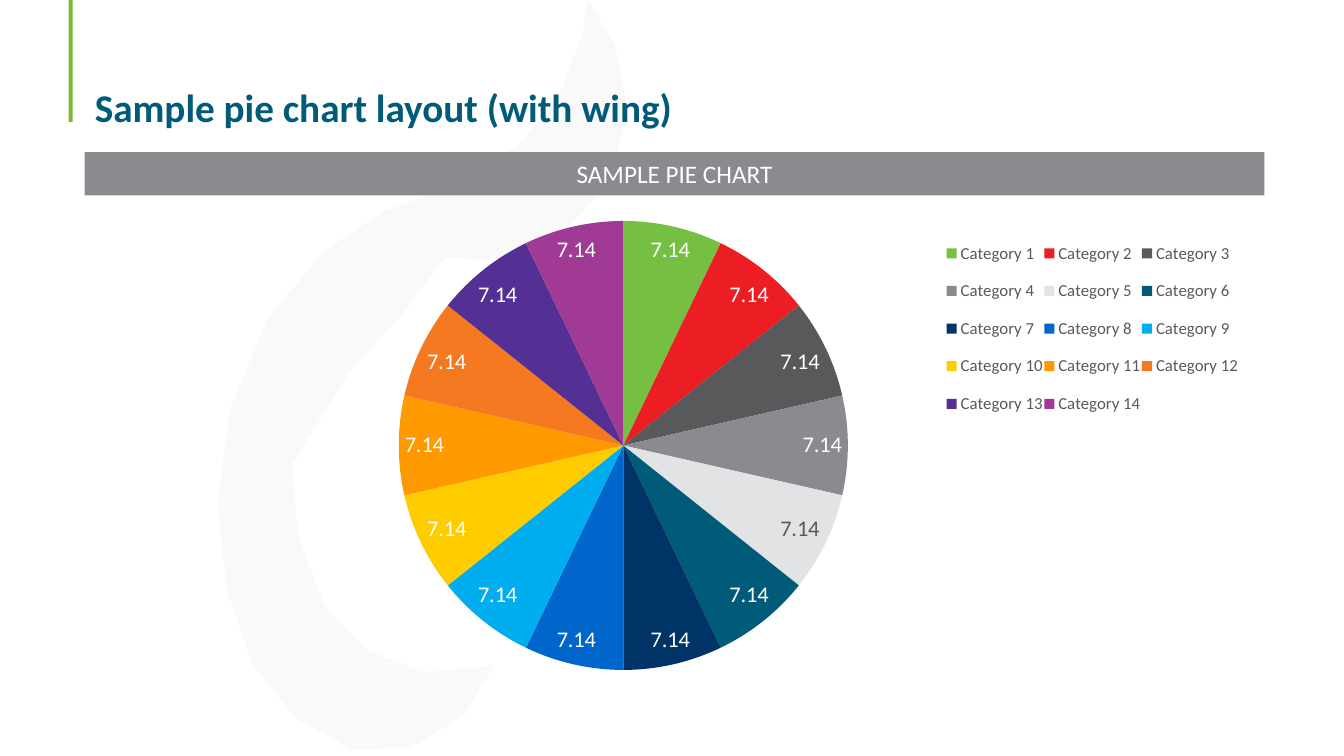
from lxml.etree import SubElement
from pptx import Presentation
from pptx.chart.data import CategoryChartData
from pptx.dml.color import RGBColor
from pptx.enum.chart import XL_CHART_TYPE, XL_LABEL_POSITION, XL_LEGEND_POSITION
from pptx.enum.shapes import MSO_SHAPE
from pptx.enum.text import MSO_ANCHOR, PP_ALIGN
from pptx.oxml.ns import qn
from pptx.util import Inches, Pt

FONT = "Calibri"
COLORS = {
    "accent": "78BB32",
    "wing": "F9F9F9",
    "title": "005B79",
    "banner": "898B8E",
    "text": "58595B",
    "white": "FFFFFF",
}
SLICES = {
    "green": "75C043",
    "red": "ED1D24",
    "charcoal": "58595B",
    "gray": "898B8E",
    "silver": "E2E3E4",
    "teal": "005B79",
    "navy": "003366",
    "blue": "0066CC",
    "sky": "00AEF0",
    "yellow": "FFCC00",
    "amber": "FF9900",
    "orange": "F47920",
    "indigo": "543094",
    "purple": "A03A95",
}
WING = [
    (5.83, 0), (6.1, 0.45), (6.23, 1.1), (6.05, 1.8), (5.57, 2.33),
    (4.9, 2.58), (4.41, 2.56), (4, 3.1), (3.46, 3.7), (2.9, 4.6),
    (2.95, 5.3), (3.22, 6.01), (3.65, 6.45), (4.2, 6.67), (4.9, 6.6),
    (4.6, 7.1), (4.07, 7.42), (3.5, 7.44), (2.94, 7.13), (2.5, 6.58),
    (2.25, 5.85), (2.16, 5), (2.28, 4.07), (2.66, 3.15), (3.22, 2.49),
    (3.8, 2.1), (4.61, 1.8), (5.15, 1.43), (5.55, 0.94), (5.78, 0.33),
]


def rgb(color):
    return RGBColor.from_string(color)


def style_font(font, size, color, bold=False):
    font.name = FONT
    font.size = Pt(size)
    font.bold = bold
    font.color.rgb = rgb(color)


def paint(s, color):
    s.shadow.inherit = False
    s.fill.solid()
    s.fill.fore_color.rgb = rgb(color)
    s.line.fill.background()


def add_bar(slide, x, y, w, h, color):
    s = slide.shapes.add_shape(
        MSO_SHAPE.RECTANGLE, Inches(x), Inches(y), Inches(w), Inches(h))
    paint(s, color)
    return s


def add_wing(slide):
    points = [(Inches(x), Inches(y)) for x, y in WING]
    builder = slide.shapes.build_freeform(*points[0])
    builder.add_line_segments(points[1:], close=True)
    paint(builder.convert_to_shape(), COLORS["wing"])


def set_title(slide, text):
    s = slide.shapes.title
    s.element.getparent().append(s.element)
    s.left, s.top = Inches(0.84), Inches(0.41)
    s.width, s.height = Inches(11.98), Inches(0.94)
    tf = s.text_frame
    tf.text = text
    tf.vertical_anchor = MSO_ANCHOR.BOTTOM
    p = tf.paragraphs[0]
    p.alignment = PP_ALIGN.LEFT
    p.line_spacing = 0.9
    style_font(p.runs[0].font, 28, COLORS["title"], True)


def add_banner(slide, text):
    tf = add_bar(slide, 0.84, 1.51, 11.7, 0.43, COLORS["banner"]).text_frame
    tf.text = text
    tf.vertical_anchor = MSO_ANCHOR.MIDDLE
    p = tf.paragraphs[0]
    p.alignment = PP_ALIGN.CENTER
    style_font(p.runs[0].font, 18, COLORS["white"])


def set_layout(parent, index, box, inner=False):
    for old in parent.findall(qn("c:layout")):
        parent.remove(old)
    layout = SubElement(parent, qn("c:layout"))
    parent.insert(index, layout)
    manual = SubElement(layout, qn("c:manualLayout"))
    if inner:
        SubElement(manual, qn("c:layoutTarget")).set("val", "inner")
    for mode in ("xMode", "yMode"):
        SubElement(manual, qn(f"c:{mode}")).set("val", "edge")
    for side, value in zip("xywh", box):
        SubElement(manual, qn(f"c:{side}")).set("val", str(value))


def add_pie(slide):
    data = CategoryChartData()
    data.categories = [f"Category {i + 1}" for i in range(len(SLICES))]
    data.add_series("Series 1", [7.14] * len(SLICES))
    chart = slide.shapes.add_chart(
        XL_CHART_TYPE.PIE, Inches(0.84), Inches(2.1),
        Inches(11.69), Inches(4.64), data).chart
    chart.has_title = False
    style_font(chart.font, 10, COLORS["text"])

    plot = chart.plots[0]
    plot.vary_by_categories = True
    series = plot.series[0]
    for i, color in enumerate(SLICES.values()):
        fmt = series.points[i].format
        fmt.fill.solid()
        fmt.fill.fore_color.rgb = rgb(color)
        fmt.line.fill.background()

    labels = series.data_labels
    labels.show_value = True
    labels.position = XL_LABEL_POSITION.BEST_FIT
    style_font(labels.font, 16, COLORS["white"])
    silver_label = series.points[list(SLICES).index("silver")].data_label
    style_font(silver_label.font, 16, COLORS["text"])
    silver_label.position = XL_LABEL_POSITION.BEST_FIT

    chart.has_legend = True
    legend = chart.legend
    legend.position = XL_LEGEND_POSITION.BOTTOM
    legend.include_in_layout = False
    style_font(legend.font, 12, COLORS["text"])
    plot_area = chart.element.find(".//" + qn("c:plotArea"))
    set_layout(plot_area, 0, (0.262, 0.02, 0.39, 0.96), inner=True)
    legend_area = chart.element.find(".//" + qn("c:legend"))
    set_layout(legend_area, 1, (0.73, 0.03, 0.25, 0.44))


def main():
    prs = Presentation()
    prs.slide_width, prs.slide_height = Inches(13.33), Inches(7.5)
    slide = prs.slides.add_slide(prs.slide_layouts[5])
    add_bar(slide, 0.68, 0, 0.04, 1.21, COLORS["accent"])
    add_wing(slide)
    set_title(slide, "Sample pie chart layout (with wing)")
    add_pie(slide)
    add_banner(slide, "SAMPLE PIE CHART")
    prs.save("out.pptx")


if __name__ == "__main__":
    main()
